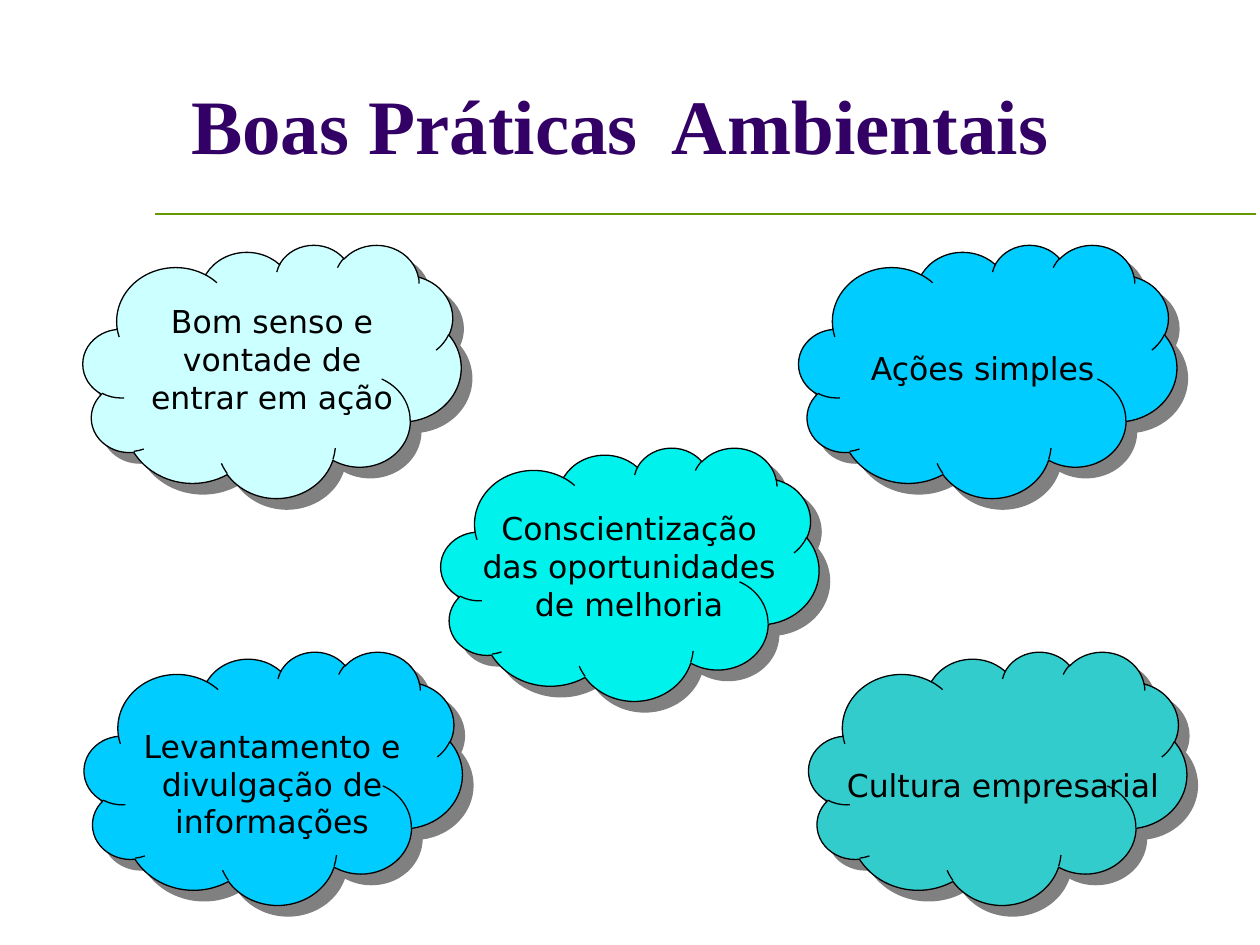
from lxml.etree import SubElement
from pptx import Presentation
from pptx.dml.color import RGBColor
from pptx.enum.shapes import MSO_CONNECTOR, MSO_SHAPE
from pptx.enum.text import MSO_ANCHOR, MSO_AUTO_SIZE, PP_ALIGN
from pptx.oxml.ns import qn
from pptx.util import Pt

CLOUD_WIDTH, CLOUD_HEIGHT = 216, 144.7
HANGING_INDENT = 27.36


def color(value):
    return RGBColor.from_string(value)


def add_rule(page, left, right, top, line_color):
    rule = page.shapes.add_connector(
        MSO_CONNECTOR.STRAIGHT, Pt(left), Pt(top), Pt(right), Pt(top))
    rule.line.color.rgb = color(line_color)
    rule.line.width = Pt(1)
    SubElement(rule._element.spPr, qn("a:effectLst"))


def add_hard_shadow(shape, shadow_color):
    shape.shadow.inherit = False
    effects = shape._element.spPr.find(qn("a:effectLst"))
    shadow = SubElement(effects, qn("a:outerShdw"), dist=str(Pt(8.5)),
                        dir=str(45 * 60000), algn="ctr", rotWithShape="0")
    SubElement(shadow, qn("a:srgbClr"), val=shadow_color)


def add_cloud(page, left, top, fill_color):
    cloud = page.shapes.add_shape(
        MSO_SHAPE.CLOUD, Pt(left), Pt(top), Pt(CLOUD_WIDTH), Pt(CLOUD_HEIGHT))
    cloud.fill.solid()
    cloud.fill.fore_color.rgb = color(fill_color)
    cloud.line.color.rgb = color("000000")
    cloud.line.width = Pt(0.75)
    add_hard_shadow(cloud, "808080")


def add_text(page, text, left, top, width, height, *, size, font, text_color,
             bold=False, anchor=MSO_ANCHOR.TOP, bottom=3.6, hanging=0, grow=False):
    box = page.shapes.add_textbox(Pt(left), Pt(top), Pt(width), Pt(height))
    frame = box.text_frame
    frame.word_wrap = True
    frame.auto_size = MSO_AUTO_SIZE.SHAPE_TO_FIT_TEXT if grow else MSO_AUTO_SIZE.NONE
    frame.vertical_anchor = anchor
    frame.margin_bottom = Pt(bottom)
    para = frame.paragraphs[0]
    para.alignment = PP_ALIGN.CENTER
    if hanging:
        properties = para._p.get_or_add_pPr()
        properties.set("marL", str(Pt(hanging)))
        properties.set("indent", str(-Pt(hanging)))
    span = para.add_run()
    span.text = text
    span.font.size = Pt(size)
    span.font.name = font
    span.font.bold = bold
    span.font.color.rgb = color(text_color)


def main():
    deck = Presentation()
    deck.slide_width, deck.slide_height = Pt(720), Pt(540)
    page = deck.slides.add_slide(deck.slide_layouts[6])

    add_rule(page, 88.8, 718, 122.4, "669900")
    add_text(page, "Boas Práticas  Ambientais ", 36, 61.2, 648, 90,
             size=44, font="Times New Roman", text_color="330066", bold=True,
             anchor=MSO_ANCHOR.BOTTOM, bottom=54)

    clouds = [
        (48.2, 372.2, "00CCFF"),
        (462.2, 372.2, "33CCCC"),
        (456.5, 139.7, "00CCFF"),
        (252, 255.6, "00F2EC"),
        (47.5, 139.7, "CCFFFF"),
    ]
    for left, top, fill_color in clouds:
        add_cloud(page, left, top, fill_color)

    labels = [
        ("\tBom senso e vontade de entrar em ação", 42.5, 169.2, 198.7, 72),
        ("Ações simples", 462.2, 195.8, 198.7, 28.8),
        ("\tConscientização das oportunidades de melhoria", 235.4, 287.3, 221, 72),
        ("\tLevantamento e divulgação de informações", 42.5, 411.8, 198.7, 72),
        ("Cultura empresarial", 473.8, 434.2, 198.7, 28.8),
    ]
    for text, left, top, width, height in labels:
        add_text(page, text, left, top, width, height, size=18,
                 font="DejaVu Sans", text_color="000000",
                 hanging=HANGING_INDENT, grow=True)

    deck.save("out.pptx")


if __name__ == "__main__":
    main()
